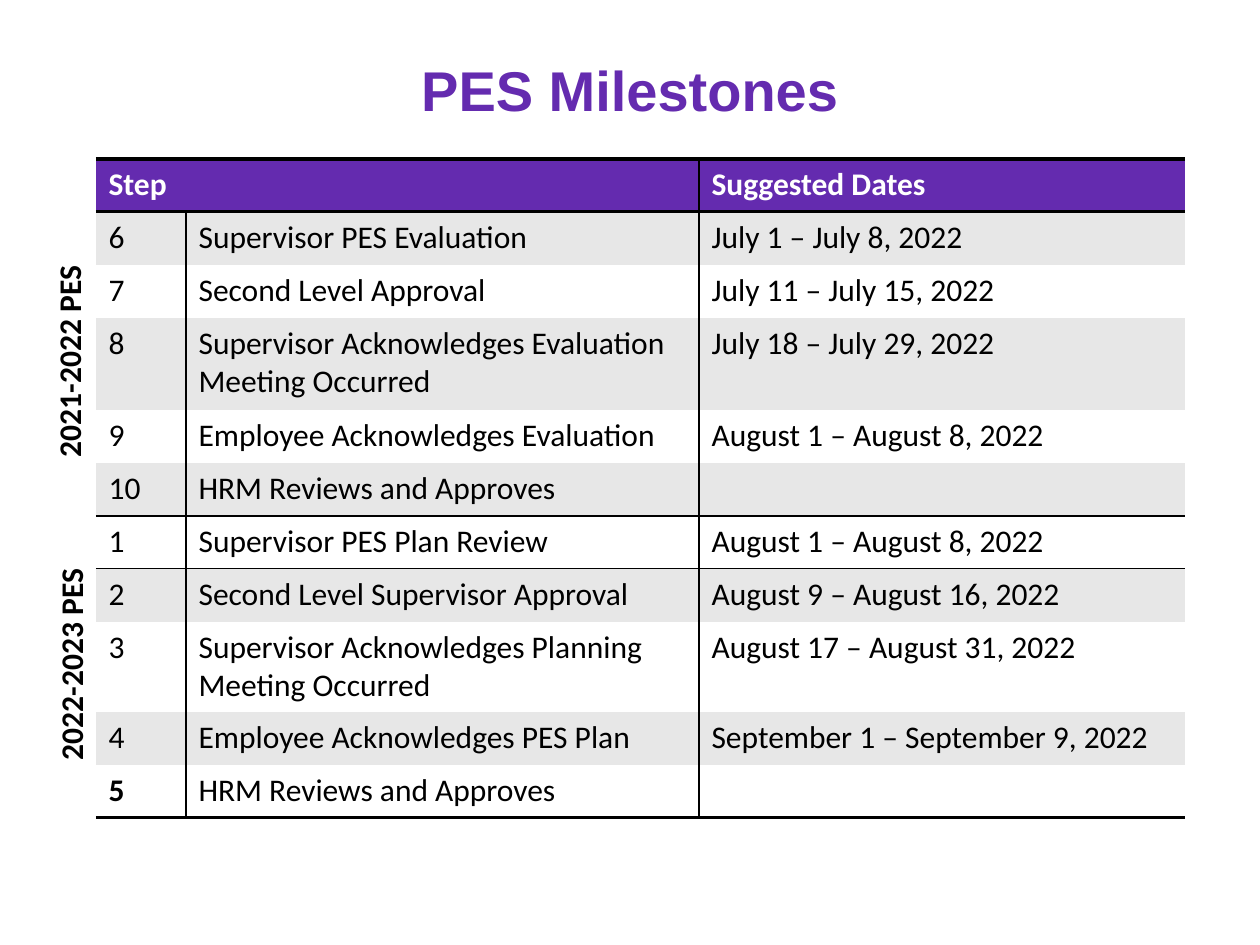
"""Build the PES Milestones slide with its table of steps and suggested dates."""
from lxml import etree
from pptx import Presentation
from pptx.dml.color import RGBColor
from pptx.enum.text import MSO_ANCHOR, PP_ALIGN
from pptx.oxml.ns import qn
from pptx.util import Inches, Pt

PX = Inches(1) // 126
PURPLE = RGBColor(0x64, 0x2B, 0xAF)
GRAY = RGBColor(0xE7, 0xE7, 0xE7)
WHITE = RGBColor(0xFF, 0xFF, 0xFF)
BLACK = RGBColor(0, 0, 0)
CENTER = PP_ALIGN.CENTER
MIDDLE = MSO_ANCHOR.MIDDLE

MILESTONES = [
    ("Step", "", "Suggested Dates"),
    ("6", "Supervisor PES Evaluation", "July 1 – July 8, 2022"),
    ("7", "Second Level Approval", "July 11 – July 15, 2022"),
    ("8", "Supervisor Acknowledges Evaluation Meeting Occurred", "July 18 – July 29, 2022"),
    ("9", "Employee Acknowledges Evaluation", "August 1 – August 8, 2022"),
    ("10", "HRM Reviews and Approves", ""),
    ("1", "Supervisor PES Plan Review", "August 1 – August 8, 2022"),
    ("2", "Second Level Supervisor Approval", "August 9 – August 16, 2022"),
    ("3", "Supervisor Acknowledges Planning Meeting Occurred", "August 17 – August 31, 2022"),
    ("4", "Employee Acknowledges PES Plan", "September 1 – September 9, 2022"),
    ("5", "HRM Reviews and Approves", ""),
]
COLUMN_WIDTHS = [90, 513, 486]
ROW_HEIGHTS = [53, 53, 53, 92, 53, 53, 53, 53, 90, 53, 53]
RULES = {0: 2, 1: 2, 6: 1, 7: 0.5, 11: 2}
CYCLES = [("2021-2022 PES", -52, 324), ("2022-2023 PES", -50, 627)]


def add_text(paragraph, text, size, font, color, bold):
    run = paragraph.add_run()
    run.text = text
    run.font.size = Pt(size)
    run.font.name = font
    run.font.color.rgb = color
    run.font.bold = bold


def set_border(cell, side, points):
    line = etree.SubElement(cell._tc.get_or_add_tcPr(), qn(f"a:ln{side}"), w=str(Pt(points)))
    if points:
        fill = etree.SubElement(line, qn("a:solidFill"))
        etree.SubElement(fill, qn("a:srgbClr"), val=str(BLACK))
    else:
        etree.SubElement(line, qn("a:noFill"))


prs = Presentation()
prs.slide_width = Inches(10)
prs.slide_height = Inches(7.5)
slide = prs.slides.add_slide(prs.slide_layouts[5])

title = slide.shapes.title
title.left, title.top, title.width, title.height = 0, 58 * PX, 1260 * PX, 70 * PX
title.text_frame.vertical_anchor = MIDDLE
heading = title.text_frame.paragraphs[0]
heading.alignment = CENTER
heading.line_spacing = 0.9
add_text(heading, "PES Milestones", 32, "Arial", PURPLE, True)

milestones = slide.shapes.add_table(
    len(MILESTONES), len(COLUMN_WIDTHS), 96 * PX, 159 * PX,
    sum(COLUMN_WIDTHS) * PX, sum(ROW_HEIGHTS) * PX).table
milestones.horz_banding = False
for column, width in zip(milestones.columns, COLUMN_WIDTHS):
    column.width = width * PX
for row, height in zip(milestones.rows, ROW_HEIGHTS):
    row.height = height * PX

for r, texts in enumerate(MILESTONES):
    header = r == 0
    row_fill = PURPLE if header else GRAY if r in (1, 3, 5, 7, 9) else WHITE
    dividers = [0, 0 if header else 1, 1, 0]
    for c, text in enumerate(texts):
        cell = milestones.cell(r, c)
        set_border(cell, "L", dividers[c])
        set_border(cell, "R", dividers[c + 1])
        set_border(cell, "T", RULES.get(r, 0))
        set_border(cell, "B", RULES.get(r + 1, 0))
        cell.fill.solid()
        cell.fill.fore_color.rgb = row_fill
        if text:
            add_text(cell.text_frame.paragraphs[0], text, 18, "Calibri",
                     WHITE if header else BLACK, header or text == "5")

for cycle, left, top in CYCLES:
    label = slide.shapes.add_textbox(left * PX, top * PX, 241 * PX, 50 * PX)
    label.rotation = 270
    label.text_frame.word_wrap = True
    add_text(label.text_frame.paragraphs[0], cycle, 18, "Calibri", BLACK, True)

prs.save("out.pptx")
